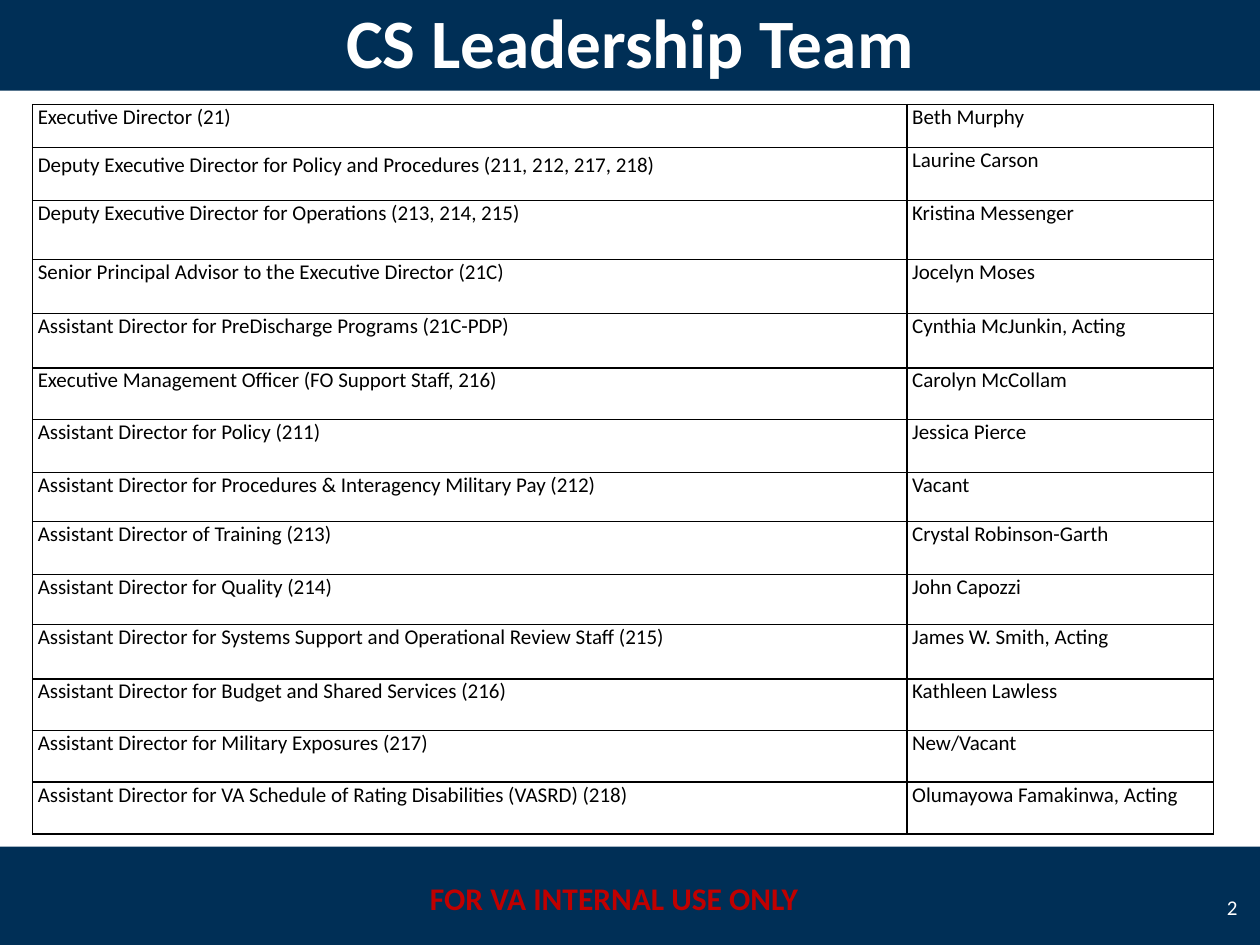
from lxml.etree import SubElement
from pptx import Presentation
from pptx.dml.color import RGBColor
from pptx.enum.shapes import MSO_SHAPE as Shape
from pptx.enum.text import MSO_ANCHOR as Anchor, PP_ALIGN as Align
from pptx.oxml.ns import qn
from pptx.util import Inches, Pt

NAVY = RGBColor(0x00, 0x2F, 0x56)
RED = RGBColor(0xC0, 0x00, 0x00)
WHITE = RGBColor(0xFF, 0xFF, 0xFF)
BLACK = RGBColor(0x00, 0x00, 0x00)

HEADER_AREA = (0, -0.08, 10, 0.8)
FOOTER_AREA = (0, 6.72, 10, 0.8)
COLUMN_WIDTHS = (6.94, 2.43)

# Row height, position, name
LEADERS = [
    (0.34, "Executive Director (21)", "Beth Murphy"),
    (0.42, "Deputy Executive Director for Policy and Procedures (211, 212, 217, 218)", "Laurine Carson"),
    (0.47, "Deputy Executive Director for Operations (213, 214, 215)", "Kristina Messenger"),
    (0.43, "Senior Principal Advisor to the Executive Director (21C)", "Jocelyn Moses"),
    (0.43, "Assistant Director for PreDischarge Programs (21C-PDP)", "Cynthia McJunkin, Acting"),
    (0.41, "Executive Management Officer (FO Support Staff, 216)", "Carolyn McCollam"),
    (0.42, "Assistant Director for Policy (211)", "Jessica Pierce"),
    (0.39, "Assistant Director for Procedures & Interagency Military Pay (212)", "Vacant"),
    (0.42, "Assistant Director of Training (213)", "Crystal Robinson-Garth"),
    (0.40, "Assistant Director for Quality (214)", "John Capozzi"),
    (0.43, "Assistant Director for Systems Support and Operational Review Staff (215)", "James W. Smith, Acting"),
    (0.41, "Assistant Director for Budget and Shared Services (216)", "Kathleen Lawless"),
    (0.41, "Assistant Director for Military Exposures (217)", "New/Vacant"),
    (0.41, "Assistant Director for VA Schedule of Rating Disabilities (VASRD) (218)", "Olumayowa Famakinwa, Acting"),
]


def write_text(frame, text, size, color, align=Align.LEFT, bold=False):
    para = frame.paragraphs[0]
    para.alignment = align
    span = para.add_run()
    span.text = text
    font_format = {"name": "Calibri", "size": Pt(size), "bold": bold}
    for name, value in font_format.items():
        setattr(span.font, name, value)
    span.font.color.rgb = color
    return para


def add_band(page, area):
    band = page.shapes.add_shape(Shape.RECTANGLE, *map(Inches, area))
    band.shadow.inherit = False
    band.fill.solid()
    band.fill.fore_color.rgb = NAVY
    band.line.fill.background()


def add_text(page, area, text, size, color, align, anchor, bold=False):
    box = page.shapes.add_textbox(*map(Inches, area))
    box.text_frame.word_wrap = True
    box.text_frame.vertical_anchor = anchor
    write_text(box.text_frame, text, size, color, align, bold)


def place_title(page, text):
    title = page.shapes.title
    title.left, title.top, title.width, title.height = map(Inches, HEADER_AREA)
    title.text_frame.vertical_anchor = Anchor.MIDDLE
    write_text(title.text_frame, text, 39.6, WHITE, Align.CENTER, bold=True)
    # The last element is drawn in front of the header band
    title.element.getparent().append(title.element)


def add_borders(cell):
    properties = cell._tc.get_or_add_tcPr()
    for side in ("lnL", "lnR", "lnT", "lnB"):
        line = SubElement(properties, qn(f"a:{side}"), w=str(Pt(1)))
        fill = SubElement(line, qn("a:solidFill"))
        SubElement(fill, qn("a:srgbClr"), val=str(BLACK))


def fill_cell(cell, text):
    margins = {"left": 0.04, "top": 0, "right": 0.04, "bottom": 0}
    for side, value in margins.items():
        setattr(cell, f"margin_{side}", Inches(value))
    add_borders(cell)
    cell.fill.background()
    return write_text(cell.text_frame, text, 12, BLACK)


def add_leader_table(page):
    heights = [height for height, *_ in LEADERS]
    frame = page.shapes.add_table(
        len(LEADERS), len(COLUMN_WIDTHS), Inches(0.26), Inches(0.83),
        Inches(sum(COLUMN_WIDTHS)), Inches(sum(heights)))
    table = frame.table
    table.first_row = table.horz_banding = False
    for column, width in zip(table.columns, COLUMN_WIDTHS):
        column.width = Inches(width)
    for row, (height, *texts) in zip(table.rows, LEADERS):
        row.height = Inches(height)
        for cell, text in zip(row.cells, texts):
            para = fill_cell(cell, text)
            if text.startswith("Deputy Executive Director for Policy"):
                para.line_spacing = 1.2


def main():
    deck = Presentation()
    deck.slide_width, deck.slide_height = Inches(10), Inches(7.5)
    page = deck.slides.add_slide(deck.slide_layouts[5])

    add_band(page, FOOTER_AREA)
    add_text(page, (3.25, 6.93, 3.25, 0.4), "FOR VA INTERNAL USE ONLY", 18, RED,
             Align.CENTER, Anchor.TOP, bold=True)
    add_band(page, HEADER_AREA)
    add_text(page, (9.5, 7, 0.42, 0.4), "2", 12, WHITE, Align.RIGHT, Anchor.MIDDLE)
    place_title(page, "CS Leadership Team")
    add_leader_table(page)

    deck.save("out.pptx")


if __name__ == "__main__":
    main()
